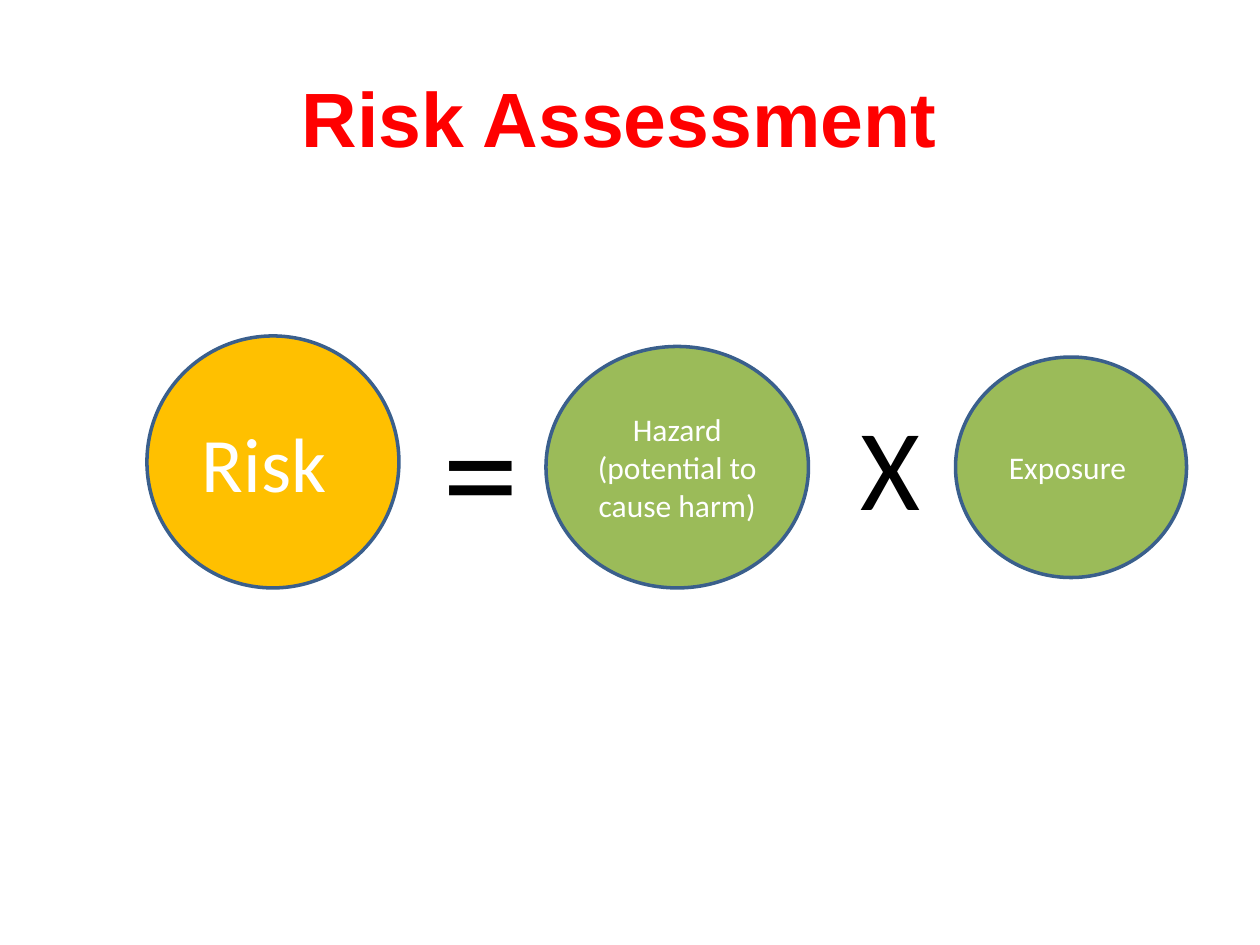
from dataclasses import dataclass

from pptx import Presentation
from pptx.dml.color import RGBColor
from pptx.enum.shapes import MSO_SHAPE
from pptx.enum.text import MSO_ANCHOR, MSO_AUTO_SIZE, PP_ALIGN
from pptx.util import Pt

OVAL = MSO_SHAPE.OVAL
MIDDLE, TOP = MSO_ANCHOR.MIDDLE, MSO_ANCHOR.TOP
CENTER, LEFT = PP_ALIGN.CENTER, PP_ALIGN.LEFT
FIT_SHAPE = MSO_AUTO_SIZE.SHAPE_TO_FIT_TEXT
TITLE_ONLY = 5


@dataclass(frozen=True)
class Theme:
    heading_font: str = "Arial"
    body_font: str = "Calibri"
    red: str = "FF0000"
    amber: str = "FFC000"
    green: str = "9BBB59"
    outline: str = "3A5F8C"
    white: str = "FFFFFF"
    black: str = "000000"
    large: int = 44
    small: int = 18
    times_size: int = 66
    equals_size: int = 88


class SlideBuilder:
    def __init__(self, slide, theme):
        self.slide = slide
        self.theme = theme

    def place(self, shape, box):
        for name, value in zip(("left", "top", "width", "height"), box):
            setattr(shape, name, Pt(value))

    def add_text(self, shape, text, frame_format, alignment, font_format, color):
        frame = shape.text_frame
        for name, value in frame_format.items():
            setattr(frame, name, value)
        paragraph = frame.paragraphs[0]
        paragraph.alignment = alignment
        run = paragraph.add_run()
        run.text = text
        for name, value in font_format.items():
            setattr(run.font, name, value)
        run.font.color.rgb = RGBColor.from_string(color)

    def title(self, text, box):
        shape = self.slide.shapes.title
        self.place(shape, box)
        font_format = {"name": self.theme.heading_font, "size": Pt(self.theme.large), "bold": True}
        self.add_text(shape, text, {"vertical_anchor": MIDDLE}, CENTER, font_format, self.theme.red)

    def circle(self, text, box, fill, size):
        shape = self.slide.shapes.add_shape(OVAL, *map(Pt, box))
        shape.shadow.inherit = False
        shape.fill.solid()
        shape.fill.fore_color.rgb = RGBColor.from_string(fill)
        shape.line.color.rgb = RGBColor.from_string(self.theme.outline)
        shape.line.width = Pt(2)
        frame_format = {"vertical_anchor": MIDDLE, "word_wrap": True}
        font_format = {"name": self.theme.body_font, "size": Pt(size)}
        self.add_text(shape, text, frame_format, CENTER, font_format, self.theme.white)

    def operator(self, text, box, size):
        shape = self.slide.shapes.add_textbox(*map(Pt, box))
        frame_format = {"vertical_anchor": TOP, "word_wrap": False, "auto_size": FIT_SHAPE}
        font_format = {"name": self.theme.body_font, "size": Pt(size)}
        self.add_text(shape, text, frame_format, LEFT, font_format, self.theme.black)


def main():
    theme = Theme()
    presentation = Presentation()
    presentation.slide_width = Pt(720)
    presentation.slide_height = Pt(540)
    slide = presentation.slides.add_slide(presentation.slide_layouts[TITLE_ONLY])
    builder = SlideBuilder(slide, theme)

    builder.title("Risk Assessment ", (36, 21.6, 648, 90))
    for text, box, fill, size in (
        ("Risk ", (84, 192, 144, 144), theme.amber, theme.large),
        ("Hazard (potential to cause harm) ", (312, 198, 150, 138), theme.green, theme.small),
        ("Exposure ", (546, 204, 132, 126), theme.green, theme.small),
    ):
        builder.circle(text, box, fill, size)
    builder.operator("X", (484.5, 222, 49, 87), theme.times_size)
    builder.operator("=", (246, 210, 59, 114), theme.equals_size)

    presentation.save("out.pptx")


if __name__ == "__main__":
    main()
